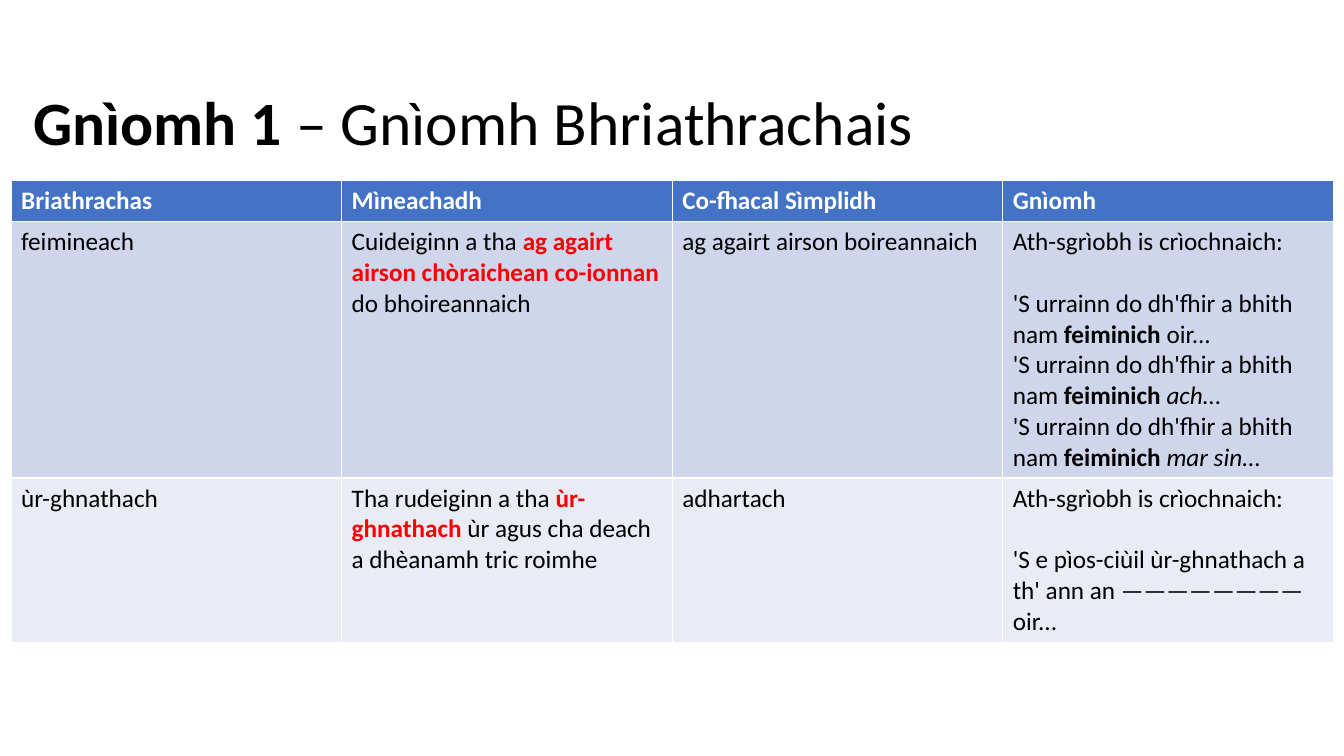
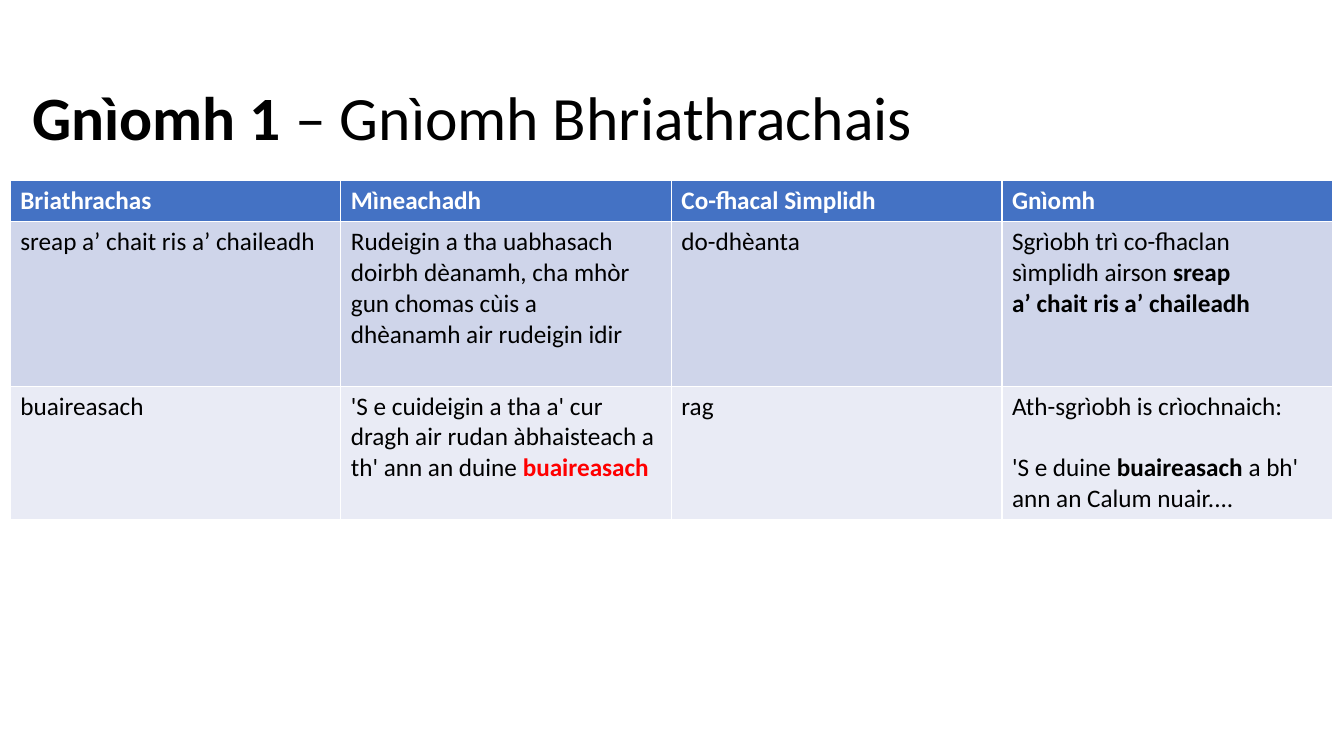
"""Build two Gaelic vocabulary slides, each with a title and an activity table."""
from dataclasses import dataclass
from typing import NamedTuple

from pptx import Presentation
from pptx.dml.color import RGBColor
from pptx.enum.text import MSO_ANCHOR, MSO_AUTO_SIZE, PP_ALIGN
from pptx.presentation import Presentation as Deck
from pptx.slide import Slide
from pptx.util import Cm, Pt

LEFT = PP_ALIGN.LEFT
MIDDLE = MSO_ANCHOR.MIDDLE
NO_AUTOFIT = MSO_AUTO_SIZE.NONE
TITLE_ONLY = 5
NBSP = chr(160)

COLOURS = {
    "text": "000000",
    "heading": "FFFFFF",
    "key": "FF0000",
    "header": "4472C4",
    "odd": "CFD5EA",
    "even": "E9EBF5",
}
FONT = "Calibri"
TITLE_SIZE = Pt(44)
TABLE_SIZE = Pt(18)
LINE_GAP = Pt(22)
TABLE_TOP = Cm(4.55)
COLUMN_WIDTH = Cm(8.33)
HEADER_HEIGHT = Cm(1.04)
TITLE_FORMAT = {"width": Cm(29.21), "height": Cm(3.68)}
TITLE_FRAME_FORMAT = {
    "vertical_anchor": MIDDLE,
    "auto_size": NO_AUTOFIT,
    "word_wrap": True,
}
TITLE_PARAGRAPH_FORMAT = {"alignment": LEFT, "line_spacing": 0.9}


class Words(NamedTuple):
    """A stretch of text in one style."""

    text: str
    bold: bool = False
    italic: bool = False
    colour: str = "text"


class Line(NamedTuple):
    """A paragraph, with the space kept above it."""

    words: list[Words]
    gap: Pt = Pt(0)


@dataclass
class Entry:
    """One vocabulary row of a table."""

    height: Cm
    cells: list[list[Line]]


@dataclass
class Activity:
    """One slide: places of title and table, and the entries."""

    title_left: Cm
    title_top: Cm
    table_left: Cm
    entries: list[Entry]


def bold(text: str) -> Words:
    """Return bold text."""
    return Words(text, bold=True)


def key(text: str) -> Words:
    """Return bold red text."""
    return Words(text, bold=True, colour="key")


def plain(text: str) -> list[Line]:
    """Return a cell with a single plain paragraph."""
    return [Line([Words(text)])]


def glue(text: str) -> str:
    """Keep the words of a text on one line."""
    return text.replace(" ", NBSP)


def feminist_line(ending: str) -> Line:
    """Return a sentence starter with an italic ending."""
    return Line([Words("'S urrainn do dh'fhir a bhith nam "), bold("feiminich "),
                 Words(ending, italic=True), Words("…")])


TITLE = Line([bold("Gnìomh 1 "), Words("– Gnìomh Bhriathrachais")])
HEADINGS = ["Briathrachas", "Mìneachadh", "Co-fhacal Sìmplidh", "Gnìomh"]
REWRITE = Line([Words("Ath-sgrìobh is crìochnaich:")])

ACTIVITIES = [
    Activity(Cm(0.58), Cm(1.32), Cm(0.28), [
        Entry(Cm(6.45), [
            plain("feimineach"),
            [Line([Words("Cuideiginn a tha "),
                   key("ag agairt airson chòraichean co-ionnan "),
                   Words("do bhoireannaich")])],
            plain("ag agairt airson boireannaich"),
            [REWRITE,
             Line([Words("'S urrainn do dh'fhir a bhith nam "), bold("feiminich"),
                   Words(" oir...")], LINE_GAP),
             feminist_line("ach"),
             feminist_line("mar sin")],
        ]),
        Entry(Cm(4.14), [
            plain("ùr-ghnathach"),
            [Line([Words("Tha rudeiginn a tha "), key("ùr-ghnathach"),
                   Words(" ùr agus cha deach a dhèanamh tric roimhe")])],
            plain("adhartach"),
            [REWRITE,
             Line([Words("'S e pìos-ciùil ùr-ghnathach a th' ann an ———————— oir...")],
                  LINE_GAP)],
        ]),
    ]),
    Activity(Cm(0.56), Cm(1.19), Cm(0.26), [
        Entry(Cm(4.14), [
            plain("sreap a’ chait ris a’ chaileadh"),
            plain("Rudeigin a tha uabhasach doirbh dèanamh, cha mhòr gun chomas cùis a "
                  + glue("dhèanamh air") + " rudeigin idir"),
            plain("do-dhèanta"),
            [Line([Words("Sgrìobh trì co-fhaclan sìmplidh airson "),
                   bold("sreap " + glue("a’ chait ris a’ chaileadh"))])],
        ]),
        Entry(Cm(3.36), [
            plain("buaireasach"),
            [Line([Words("'S e cuideigin a tha a' cur dragh air rudan àbhaisteach "
                         "a th' ann an duine "), key("buaireasach")])],
            plain("rag"),
            [REWRITE,
             Line([Words("'S e duine "), bold("buaireasach"),
                   Words(" a bh' ann an Calum nuair....")], LINE_GAP)],
        ]),
    ]),
]


def apply_format(target: object, values: dict[str, object]) -> None:
    """Set each named attribute of the target."""
    for name, value in values.items():
        setattr(target, name, value)


def write_lines(frame, lines: list[Line], size: Pt) -> None:
    """Write paragraphs into a text frame."""
    for index, line in enumerate(lines):
        paragraph = frame.add_paragraph() if index else frame.paragraphs[0]
        paragraph.space_before = line.gap
        for words in line.words:
            run = paragraph.add_run()
            run.text = words.text
            apply_format(run.font, {"name": FONT, "size": size, "bold": words.bold,
                                    "italic": words.italic})
            run.font.color.rgb = RGBColor.from_string(COLOURS[words.colour])


def add_title(slide: Slide, activity: Activity) -> None:
    """Place and fill the title."""
    title = slide.shapes.title
    apply_format(title, {"left": activity.title_left, "top": activity.title_top,
                         **TITLE_FORMAT})
    apply_format(title.text_frame, TITLE_FRAME_FORMAT)
    write_lines(title.text_frame, [TITLE], TITLE_SIZE)
    apply_format(title.text_frame.paragraphs[0], TITLE_PARAGRAPH_FORMAT)


def add_vocabulary(slide: Slide, activity: Activity) -> None:
    """Draw the table of headings and entries."""
    headings = [[Line([Words(text, bold=True, colour="heading")])] for text in HEADINGS]
    rows = [Entry(HEADER_HEIGHT, headings), *activity.entries]
    vocabulary = slide.shapes.add_table(
        len(rows), len(HEADINGS), activity.table_left, TABLE_TOP,
        COLUMN_WIDTH * len(HEADINGS), sum(row.height for row in rows)).table
    for column in vocabulary.columns:
        column.width = COLUMN_WIDTH
    for row_index, (row, fill) in enumerate(zip(rows, ("header", "odd", "even"))):
        vocabulary.rows[row_index].height = row.height
        for column_index, lines in enumerate(row.cells):
            cell = vocabulary.cell(row_index, column_index)
            cell.fill.solid()
            cell.fill.fore_color.rgb = RGBColor.from_string(COLOURS[fill])
            write_lines(cell.text_frame, lines, TABLE_SIZE)


def add_activity(deck: Deck, activity: Activity) -> None:
    """Add one activity slide."""
    slide = deck.slides.add_slide(deck.slide_layouts[TITLE_ONLY])
    add_title(slide, activity)
    add_vocabulary(slide, activity)


def main() -> None:
    """Build and save the deck."""
    deck = Presentation()
    apply_format(deck, {"slide_width": Cm(33.87), "slide_height": Cm(19.05)})
    for activity in ACTIVITIES:
        add_activity(deck, activity)
    deck.save("out.pptx")


if __name__ == "__main__":
    main()
